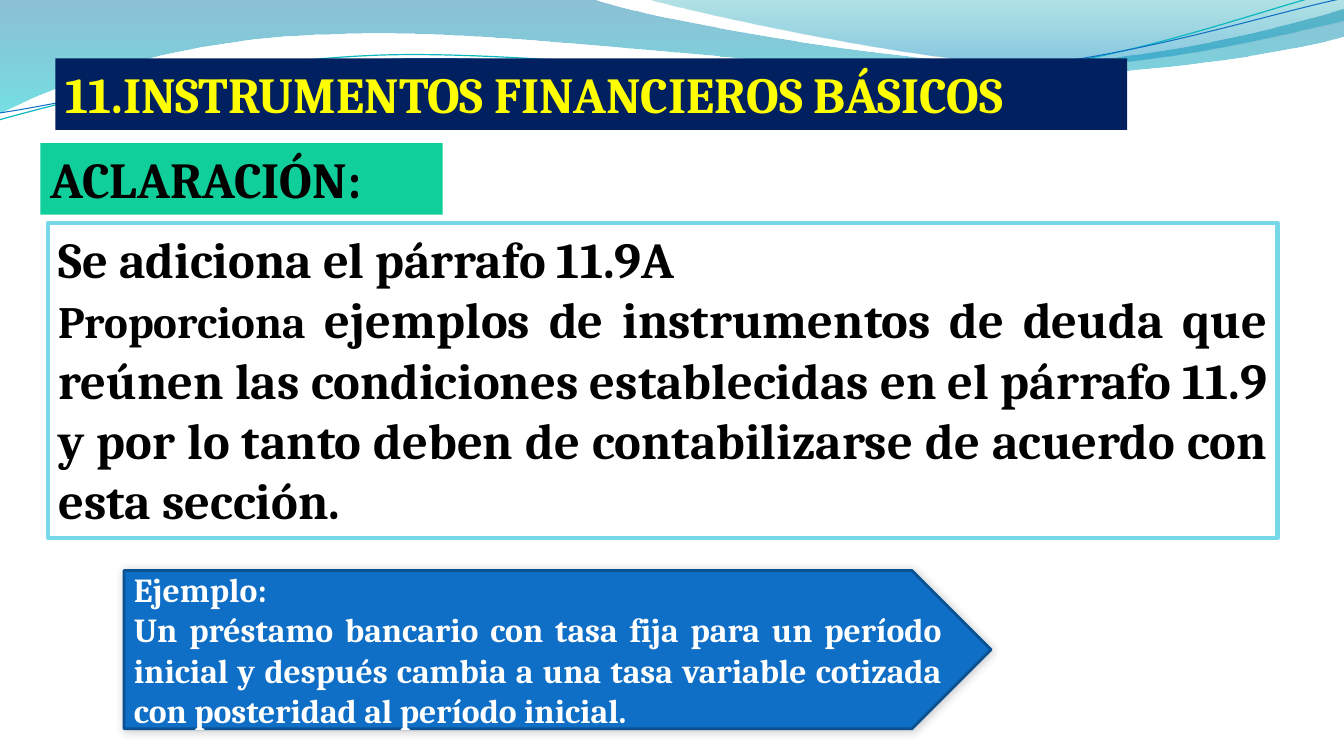
"""Build the slide on basic financial instruments and paragraph 11.9A."""
import math

from lxml import etree
from pptx import Presentation
from pptx.dml.color import RGBColor
from pptx.enum.shapes import MSO_SHAPE
from pptx.enum.text import MSO_ANCHOR, MSO_AUTO_SIZE, PP_ALIGN
from pptx.oxml.ns import qn
from pptx.util import Pt

RECTANGLE, PENTAGON = MSO_SHAPE.RECTANGLE, MSO_SHAPE.PENTAGON
TOP, MIDDLE = MSO_ANCHOR.TOP, MSO_ANCHOR.MIDDLE
LEFT, JUSTIFY = PP_ALIGN.LEFT, PP_ALIGN.JUSTIFY
GROW, FIXED = MSO_AUTO_SIZE.SHAPE_TO_FIT_TEXT, MSO_AUTO_SIZE.NONE

PX = 9144
SLIDE_SIZE = (1333, 750)
FONT = "Cambria"
COLORS = {
    "navy": "002060", "yellow": "FFFF00", "green": "10CF9B", "black": "000000",
    "white": "FFFFFF", "blue": "0F6FC6", "dark_blue": "0B5292", "sky": "77D9E8",
    "teal": "0AB8BF", "deep_wave": "0074A1", "bright_wave": "00C6CF",
    "pale_wave": "00A1A9", "mid_wave": "008BBF",
}

WAVES = [
    {"box": (-1, -1, 1336, 114),
     "segments": [[(0, 0)], [(587, -1)],
                  [(634, 17), (885, 63), (1011, 63)], [(1138, 63), (1278, 26), (1333, 9)],
                  [(1335, 36)],
                  [(1311, 44), (1160, 76), (994, 75)], [(829, 75), (509, 28), (343, 34)],
                  [(172, 36), (61, 83), (-1, 113)], [(0, 0)]],
     "stops": [(0, "deep_wave", 45), (100, "bright_wave", 55)]},
    {"box": (639, -1, 694, 70),
     "segments": [[(639, -1)],
                  [(679, 11), (909, 62), (1025, 65)], [(1141, 69), (1282, 32), (1333, 21)],
                  [(1333, 0)], [(639, -1)]],
     "stops": [(0, "pale_wave", 30), (80, "mid_wave", 45)]},
    {"box": (-3, 22, 1336, 71), "tilt": -2.7,
     "segments": [[(-1, 119)],
                  [(64, 101), (211, 62), (369, 55)], [(527, 48), (790, 87), (950, 76)],
                  [(1110, 66), (1252, 8), (1331, -10)]],
     "line": "teal", "width": 0.85},
    {"box": (-2, 30, 1338, 58), "tilt": -2.7,
     "segments": [[(0, 112)],
                  [(63, 103), (218, 66), (378, 59)], [(537, 53), (796, 82), (955, 72)],
                  [(1115, 62), (1255, 14), (1334, -2)]],
     "line": "blue", "width": 0.75},
]

PANELS = [
    {"box": (55, 58, 1063, 71), "fill": "navy", "color": "yellow",
     "text": [[("11.INSTRUMENTOS FINANCIEROS BÁSICOS", 36)]]},
    {"box": (48, 221, 1219, 313), "line": "sky", "width": 3, "align": JUSTIFY,
     "text": [[("Se adiciona el párrafo 11.9A", 36)],
              [("Proporciona", 32),
               (" ejemplos de instrumentos de deuda que reúnen las condiciones "
                "establecidas en el párrafo 11.9 y por lo tanto deben de "
                "contabilizarse de acuerdo con esta sección.", 36)]]},
    {"box": (40, 142, 399, 71), "fill": "green", "text": [[("ACLARACIÓN:", 36)]]},
    {"box": (123, 566, 860, 157), "kind": PENTAGON, "fill": "blue", "line": "dark_blue",
     "width": 2, "color": "white", "align": JUSTIFY, "anchor": MIDDLE, "fit": FIXED,
     "shadow": True,
     "text": [[("Ejemplo:", 24)],
              [("Un préstamo bancario con tasa fija para un período inicial y después "
                "cambia a una tasa variable cotizada con posteridad al período "
                "inicial.", 24)]]},
]


def rgb(name):
    return RGBColor.from_string(COLORS[name])


def add_color(parent, name, alpha):
    color = etree.SubElement(parent, qn("a:srgbClr"), val=COLORS[name])
    etree.SubElement(color, qn("a:alpha"), val=str(alpha * 1000))


def style_shape(shape, fill=None, line=None, width=1):
    shape.shadow.inherit = False
    if fill:
        shape.fill.solid()
        shape.fill.fore_color.rgb = rgb(fill)
    else:
        shape.fill.background()
    if line:
        shape.line.color.rgb = rgb(line)
        shape.line.width = Pt(width)
    else:
        shape.line.fill.background()


def fill_gradient(shape, stops):
    properties = shape.element.spPr
    gradient = etree.Element(qn("a:gradFill"), rotWithShape="1")
    stop_list = etree.SubElement(gradient, qn("a:gsLst"))
    for position, name, alpha in stops:
        add_color(etree.SubElement(stop_list, qn("a:gs"), pos=str(position * 1000)), name, alpha)
    etree.SubElement(gradient, qn("a:lin"), ang="5400000", scaled="0")
    properties.replace(properties.find(qn("a:noFill")), gradient)


def untilt(point, box, tilt):
    """Give a point's place inside the box before the box is tilted, in EMU."""
    left, top, width, height = box
    x, y = point[0] - left - width / 2, point[1] - top - height / 2
    cosine, sine = math.cos(math.radians(tilt)), math.sin(math.radians(tilt))
    return (round((x * cosine + y * sine + width / 2) * PX),
            round((y * cosine - x * sine + height / 2) * PX))


def draw_curves(shape, segments, box, tilt, closed):
    outline = shape.element.spPr.find(".//" + qn("a:path"))
    outline.clear()
    outline.set("w", str(box[2] * PX))
    outline.set("h", str(box[3] * PX))
    for index, segment in enumerate(segments):
        straight = "a:lnTo" if index else "a:moveTo"
        command = etree.SubElement(
            outline, qn("a:cubicBezTo" if len(segment) == 3 else straight))
        for point in segment:
            x, y = untilt(point, box, tilt)
            etree.SubElement(command, qn("a:pt"), x=str(x), y=str(y))
    if closed:
        etree.SubElement(outline, qn("a:close"))


def add_wave(slide, box, segments, tilt=0, stops=None, line=None, width=1):
    ends = [segment[-1] for segment in segments]
    builder = slide.shapes.build_freeform(*ends[0], scale=PX)
    builder.add_line_segments(ends[1:], close=False)
    shape = builder.convert_to_shape()
    shape.left, shape.top, shape.width, shape.height = (value * PX for value in box)
    shape.rotation = tilt
    draw_curves(shape, segments, box, tilt, closed=bool(stops))
    style_shape(shape, line=line, width=width)
    if stops:
        fill_gradient(shape, stops)


def write_text(shape, text, color="black", align=LEFT, anchor=TOP, fit=GROW):
    frame = shape.text_frame
    frame.word_wrap = True
    frame.auto_size = fit
    frame.vertical_anchor = anchor
    for index, runs in enumerate(text):
        paragraph = frame.add_paragraph() if index else frame.paragraphs[0]
        paragraph.alignment = align
        for words, size in runs:
            run = paragraph.add_run()
            run.text = words
            run.font.name = FONT
            run.font.size = Pt(size)
            run.font.bold = True
            run.font.color.rgb = rgb(color)


def add_panel(slide, box, text, kind=RECTANGLE, fill=None, line=None, width=1,
              shadow=False, **text_format):
    shape = slide.shapes.add_shape(kind, *(value * PX for value in box))
    style_shape(shape, fill, line, width)
    if shadow:
        effects = shape.element.spPr.find(qn("a:effectLst"))
        outer = etree.SubElement(effects, qn("a:outerShdw"), blurRad=str(Pt(6)),
                                 dist="0", dir="13500000", rotWithShape="0")
        add_color(outer, "black", 20)
    write_text(shape, text, **text_format)


def main():
    presentation = Presentation()
    presentation.slide_width, presentation.slide_height = (side * PX for side in SLIDE_SIZE)
    slide = presentation.slides.add_slide(presentation.slide_layouts[6])
    for wave in WAVES:
        add_wave(slide, **wave)
    for panel in PANELS:
        add_panel(slide, **panel)
    presentation.save("out.pptx")


if __name__ == "__main__":
    main()
